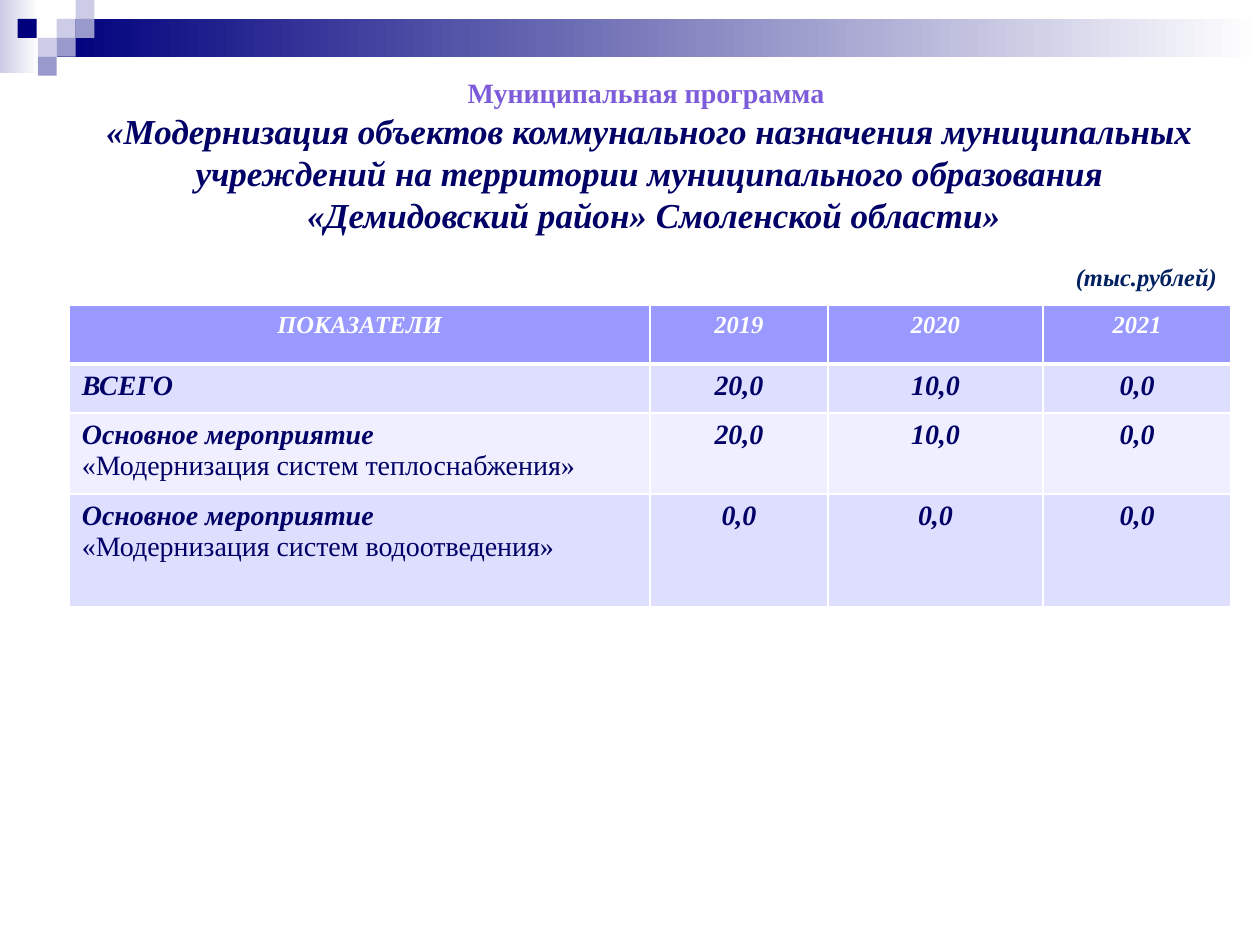
from lxml import etree
from pptx import Presentation
from pptx.dml.color import RGBColor
from pptx.enum.shapes import MSO_SHAPE as Shape
from pptx.enum.text import MSO_AUTO_SIZE as AutoSize, PP_ALIGN as Align
from pptx.oxml.ns import qn
from pptx.util import Inches, Pt

WHITE = RGBColor(0xFF, 0xFF, 0xFF)
NAVY = RGBColor(0x00, 0x00, 0x7D)
PALE = RGBColor(0xCC, 0xCC, 0xE6)
MIDDLE = RGBColor(0x99, 0x99, 0xCC)
VIOLET = RGBColor(0x7D, 0x5C, 0xDA)
INK = RGBColor(0x00, 0x00, 0x66)
UNIT_BLUE = RGBColor(0x00, 0x20, 0x60)
HEADER = RGBColor(0x99, 0x99, 0xFF)
BAND_DARK = RGBColor(0xDE, 0xDE, 0xFF)
BAND_LIGHT = RGBColor(0xEF, 0xEF, 0xFF)


def add_span(para, text, size, color, bold=True, italic=True):
    span = para.add_run()
    span.text = text
    span.font.name = "Times New Roman"
    span.font.size = Pt(size)
    span.font.color.rgb = color
    span.font.bold = bold
    span.font.italic = italic


def add_border(cell, side, width):
    line = etree.SubElement(cell._tc.get_or_add_tcPr(), qn(f"a:{side}"), w=str(Pt(width)))
    fill = etree.SubElement(line, qn("a:solidFill"))
    etree.SubElement(fill, qn("a:srgbClr"), val=str(WHITE))


deck = Presentation()
deck.slide_width = Inches(10)
deck.slide_height = Inches(7.5)
page = deck.slides.add_slide(deck.slide_layouts[6])

decorations = [
    (0, 0, 0.31, 0.58, PALE, True),
    (0.45, 0.15, 9.55, 0.3, NAVY, True),
    (0.45, 0.15, 0.15, 0.15, PALE, False),
    (0.6, 0, 0.15, 0.15, PALE, False),
    (0.6, 0.15, 0.15, 0.15, MIDDLE, False),
    (0.3, 0.3, 0.15, 0.15, PALE, False),
    (0.14, 0.15, 0.15, 0.15, NAVY, False),
    (0.45, 0.3, 0.15, 0.15, MIDDLE, False),
    (0.3, 0.45, 0.15, 0.15, MIDDLE, False),
]
for left, top, width, height, color, fades in decorations:
    box = page.shapes.add_shape(
        Shape.RECTANGLE, Inches(left), Inches(top), Inches(width), Inches(height))
    box.shadow.inherit = False
    box.line.fill.background()
    if fades:
        box.fill.gradient()
        box.fill.gradient_angle = 0
        for stop, shade in zip(box.fill.gradient_stops, (color, WHITE)):
            stop.color.rgb = shade
    else:
        box.fill.solid()
        box.fill.fore_color.rgb = color

title = page.shapes.add_textbox(Inches(0.31), Inches(0.55), Inches(9.69), Inches(1.38)).text_frame
title.word_wrap = True
title.auto_size = AutoSize.SHAPE_TO_FIT_TEXT
title_lines = [
    ("Муниципальная программа ", 16, VIOLET, False),
    ("«Модернизация объектов коммунального назначения муниципальных учреждений "
     "на территории муниципального образования", 20, INK, True),
    (" «Демидовский район» Смоленской области»", 20, INK, True),
]
for index, (text, size, color, italic) in enumerate(title_lines):
    para = title.add_paragraph() if index else title.paragraphs[0]
    para.alignment = Align.CENTER
    add_span(para, text, size, color, italic=italic)

rows = [
    ("ПОКАЗАТЕЛИ", "2019", "2020", "2021"),
    ("ВСЕГО", "20,0", "10,0", "0,0"),
    ("Основное мероприятие\n«Модернизация систем теплоснабжения»", "20,0", "10,0", "0,0"),
    ("Основное мероприятие\n«Модернизация систем водоотведения»", "0,0", "0,0", "0,0"),
]
row_heights = [0.47, 0.39, 0.64, 0.9]
column_widths = [4.61, 1.41, 1.71, 1.49]
row_fills = [HEADER, BAND_DARK, BAND_LIGHT, BAND_DARK]
table = page.shapes.add_table(
    len(rows), len(column_widths), Inches(0.55), Inches(2.42),
    Inches(sum(column_widths)), Inches(sum(row_heights))).table
for column, width in zip(table.columns, column_widths):
    column.width = Inches(width)
for row_index, texts in enumerate(rows):
    table.rows[row_index].height = Inches(row_heights[row_index])
    is_header = row_index == 0
    for column_index, text in enumerate(texts):
        cell = table.cell(row_index, column_index)
        for side in ("lnL", "lnR", "lnT", "lnB"):
            meets_header = (is_header and side == "lnB") or (row_index == 1 and side == "lnT")
            add_border(cell, side, 3 if meets_header else 1)
        cell.fill.solid()
        cell.fill.fore_color.rgb = row_fills[row_index]
        for line_index, line in enumerate(text.split("\n")):
            frame = cell.text_frame
            para = frame.add_paragraph() if line_index else frame.paragraphs[0]
            para.alignment = Align.CENTER if is_header or column_index else Align.LEFT
            strong = line_index == 0
            add_span(para, line, 14 if is_header else 16,
                     WHITE if is_header else INK, strong, strong)

unit = page.shapes.add_textbox(Inches(8.44), Inches(2.03), Inches(1.33), Inches(0.34)).text_frame
unit.word_wrap = False
unit.auto_size = AutoSize.SHAPE_TO_FIT_TEXT
add_span(unit.paragraphs[0], "(тыс.рублей)", 14, UNIT_BLUE)

deck.save("out.pptx")
